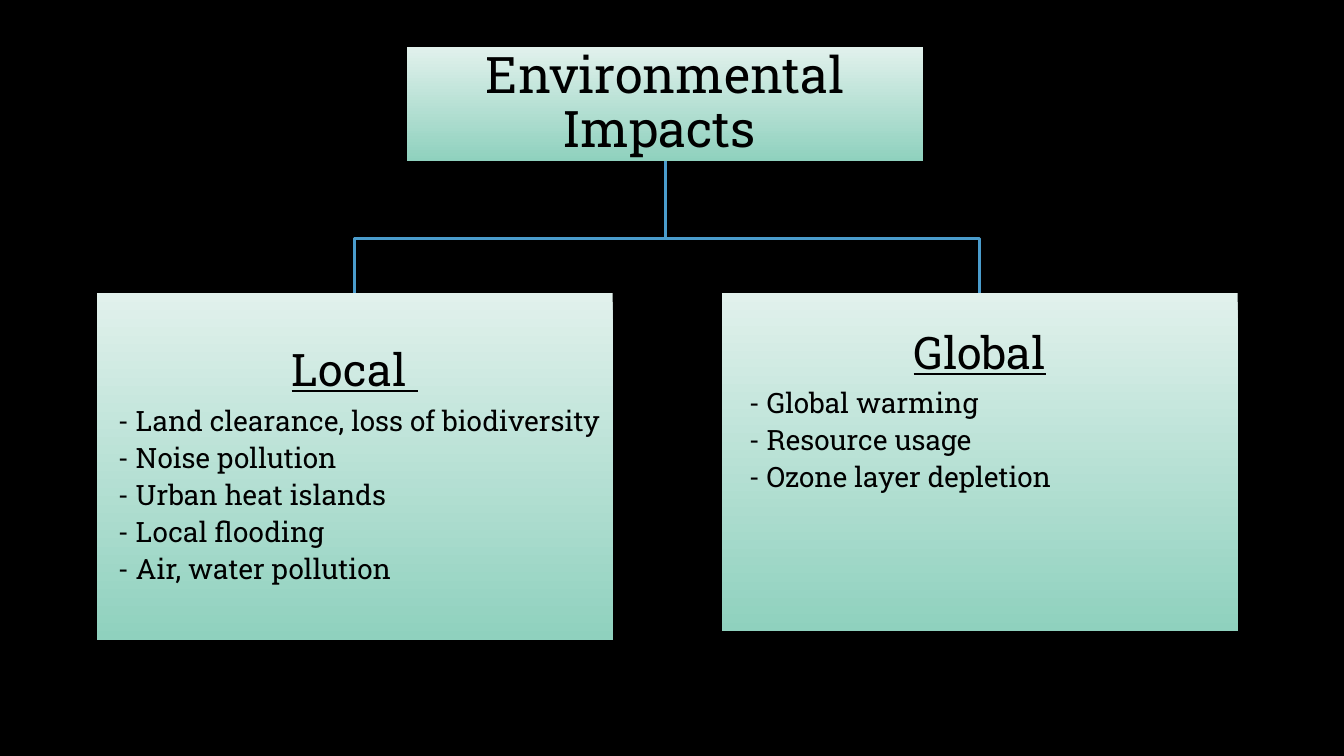
"""Build the environmental impacts hierarchy slide."""
import pptx
import pptx.dml.color
import pptx.enum.text
import pptx.util

Pt = pptx.util.Pt
FONT = "Roboto Slab"
BOX_WIDTH = 368.6
HEADER = (290.9, 33.8, BOX_WIDTH, 81.4)
BRANCH_TOP = 209.5
BEND_Y = 170.6
BRANCHES = [
    ("Local ", ["Land clearance, loss of biodiversity", "Noise pollution",
                "Urban heat islands", "Local flooding", "Air, water pollution"],
     69.1, 247.6, 13.7, 1.4),
    ("Global", ["Global warming", "Resource usage", "Ozone layer depletion"],
     515.5, 241.2, 18, 72.7),
]


def paint(color_format, color):
    """Apply a hex colour to a colour format."""
    color_format.rgb = pptx.dml.color.RGBColor.from_string(color)


def style_box(box, margin):
    """Give a box its vertical gradient and text frame settings."""
    box.fill.gradient()
    box.fill.gradient_angle = 270
    for stop, color in zip(box.fill.gradient_stops, ("E1F1EC", "8FD1BE")):
        paint(stop.color, color)
    box.line.fill.background()
    frame = box.text_frame
    frame.word_wrap = True
    frame.auto_size = pptx.enum.text.MSO_AUTO_SIZE.NONE
    frame.vertical_anchor = pptx.enum.text.MSO_ANCHOR.MIDDLE
    frame.margin_left = frame.margin_right = Pt(margin)
    frame.margin_top = frame.margin_bottom = Pt(margin)


def format_paragraph(paragraph, size, centred=True, underline=False):
    """Set the spacing, alignment and font of a paragraph."""
    align = pptx.enum.text.PP_ALIGN
    paragraph.alignment = align.CENTER if centred else align.LEFT
    paragraph.line_spacing = 0.9
    paragraph.space_before = Pt(0)
    paragraph.space_after = Pt(size * 0.24)
    for run in paragraph.runs:
        run.font.name = FONT
        run.font.size = Pt(size)
        run.font.underline = underline
        paint(run.font.color, "000000")


def add_header(slide):
    """Place and format the slide title."""
    header = slide.shapes.title
    header.left, header.top, header.width, header.height = map(Pt, HEADER)
    style_box(header, 2.2)
    header.text_frame.text = "Environmental Impacts "
    format_paragraph(header.text_frame.paragraphs[0], 36)


def add_link(slide, branch_x):
    """Draw the bent line from the header to a branch."""
    left, top, width, height = HEADER
    stem_x = left + width / 2
    points = [(stem_x, BEND_Y), (branch_x, BEND_Y), (branch_x, BRANCH_TOP)]
    builder = slide.shapes.build_freeform(Pt(stem_x), Pt(top + height))
    builder.add_line_segments([(Pt(x), Pt(y)) for x, y in points], close=False)
    link = builder.convert_to_shape()
    link.shadow.inherit = False
    link.fill.background()
    link.line.width = Pt(2)
    paint(link.line.color, "4A9CCC")


def add_branch(slide, heading, impacts, left, height, indent, bottom_margin):
    """Add a box with an underlined heading and its list of impacts."""
    branch = slide.shapes.add_shape(
        pptx.enum.shapes.MSO_SHAPE.RECTANGLE,
        Pt(left), Pt(BRANCH_TOP), Pt(BOX_WIDTH), Pt(height))
    branch.shadow.inherit = False
    style_box(branch, 1.4)
    frame = branch.text_frame
    frame.margin_bottom = Pt(bottom_margin)
    frame.text = heading
    format_paragraph(frame.paragraphs[0], 32, underline=True)
    for impact in impacts:
        paragraph = frame.add_paragraph()
        paragraph.text = f"- {impact}"
        format_paragraph(paragraph, 20, centred=False)
        properties = paragraph._p.get_or_add_pPr()
        properties.set("marL", "0")
        properties.set("indent", str(Pt(indent)))


def main():
    """Create the slide and save it."""
    deck = pptx.Presentation()
    deck.slide_width, deck.slide_height = Pt(960), Pt(540)
    slide = deck.slides.add_slide(deck.slide_layouts[5])
    slide.background.fill.solid()
    paint(slide.background.fill.fore_color, "000000")
    add_header(slide)
    for heading, impacts, left, height, indent, bottom_margin in BRANCHES:
        add_link(slide, left + BOX_WIDTH / 2)
        add_branch(slide, heading, impacts, left, height, indent, bottom_margin)
    deck.save("out.pptx")


if __name__ == "__main__":
    main()
